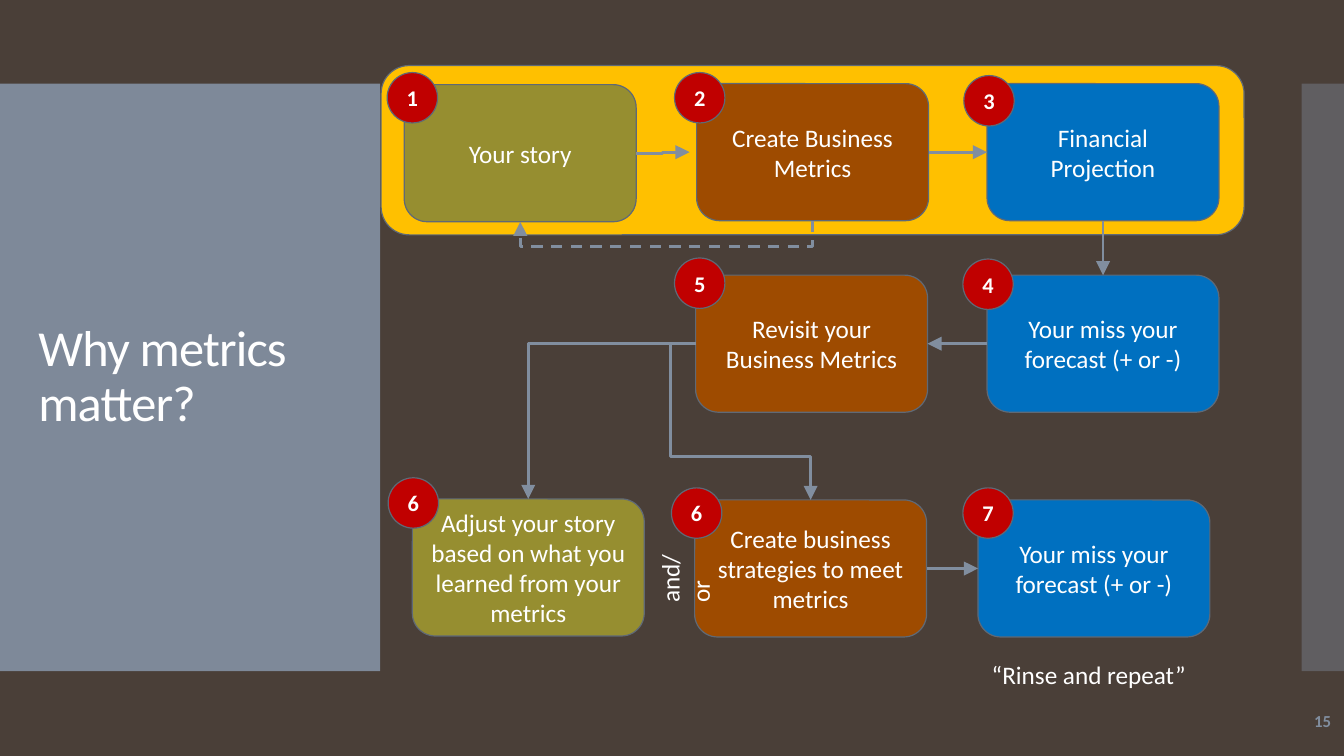
from dataclasses import dataclass

from lxml import etree
from pptx import Presentation
from pptx.dml.color import RGBColor
from pptx.enum.dml import MSO_LINE
from pptx.enum.shapes import MSO_CONNECTOR, MSO_SHAPE
from pptx.enum.text import MSO_ANCHOR, PP_ALIGN
from pptx.oxml.ns import qn
from pptx.util import Inches, Pt

RECT, ROUND, OVAL = MSO_SHAPE.RECTANGLE, MSO_SHAPE.ROUNDED_RECTANGLE, MSO_SHAPE.OVAL
STRAIGHT, ELBOW = MSO_CONNECTOR.STRAIGHT, MSO_CONNECTOR.ELBOW
LEFT, CENTER, RIGHT = PP_ALIGN.LEFT, PP_ALIGN.CENTER, PP_ALIGN.RIGHT
TOP_ANCHOR, MIDDLE = MSO_ANCHOR.TOP, MSO_ANCHOR.MIDDLE
DASH = MSO_LINE.DASH
TOP_SIDE, LEFT_SIDE, BOTTOM_SIDE, RIGHT_SIDE = range(4)


@dataclass(frozen=True)
class Theme:
    font: str = "Calibri"
    background: str = "4A3F38"
    slate: str = "818E9F"
    outline: str = "5F6976"
    band: str = "FFC000"
    story: str = "968E30"
    metrics: str = "9E4B00"
    forecast: str = "0070C0"
    badge: str = "C00000"
    text: str = "FFFFFF"
    title_size: int = 36
    body_size: int = 18
    badge_size: int = 16
    number_size: int = 12


THEME = Theme()
STEP_SIZE = (2.3, 1.36)
BADGE_SIZE = (0.5, 0.5)
STEPS = {
    "story": ("1", "Your story", THEME.story, (0.23, 0.19), (0.06, 0.07)),
    "metrics": ("2", "Create Business Metrics", THEME.metrics, (3.13, 0.18), (2.91, 0.07)),
    "projection": ("3", "Financial Projection", THEME.forecast, (6.01, 0.18), (5.78, 0.1)),
    "miss": ("4", "Your miss your forecast (+ or -)", THEME.forecast, (6.01, 2.08), (5.77, 1.92)),
    "revisit": ("5", "Revisit your Business Metrics", THEME.metrics, (3.12, 2.08), (2.91, 1.91)),
    "adjust": ("6", "Adjust your story based on what you learned from your metrics",
               THEME.story, (0.31, 4.3), (0.07, 4.09)),
    "strategy": ("6", "Create business strategies to meet metrics",
                 THEME.metrics, (3.11, 4.31), (2.88, 4.19)),
    "repeat": ("7", "Your miss your forecast (+ or -)", THEME.forecast, (5.92, 4.31), (5.77, 4.19)),
}


def apply(target, **values):
    for name, value in values.items():
        setattr(target, name, value)


def write(shape, text, size, color=THEME.text, align=CENTER, anchor=MIDDLE, bold=False):
    frame = shape.text_frame
    apply(frame, word_wrap=True, vertical_anchor=anchor)
    para = frame.paragraphs[0]
    para.alignment = align
    span = para.add_run()
    span.text = text
    apply(span.font, name=THEME.font, size=Pt(size), bold=bold)
    span.font.color.rgb = RGBColor.from_string(color)
    return span


def add_block(page, kind, box, color, outlined=True, alpha=None):
    shape = page.shapes.add_shape(kind, *map(Inches, box))
    shape.shadow.inherit = False
    shape.fill.solid()
    shape.fill.fore_color.rgb = RGBColor.from_string(color)
    if outlined:
        shape.line.color.rgb = RGBColor.from_string(THEME.outline)
        shape.line.width = Pt(0.85)
    else:
        shape.line.fill.background()
    if alpha:
        tint = shape._element.spPr.find(qn("a:solidFill")).find(qn("a:srgbClr"))
        etree.SubElement(tint, qn("a:alpha"), val=str(alpha * 1000))
    return shape


def add_label(page, box, text, size, **layout):
    label = page.shapes.add_textbox(*map(Inches, box))
    write(label, text, size, **layout)
    return label


def add_arrow(page, kind, source, target, preset=None, adjust=(), downward=False, dash=None):
    arrow = page.shapes.add_connector(kind, 0, 0, 0, 0)
    arrow.begin_connect(*source)
    if isinstance(target[0], int):
        arrow.end_x, arrow.end_y = target
    else:
        arrow.end_connect(*target)
    if downward:
        middle_x = (arrow.begin_x + arrow.end_x) // 2
        middle_y = (arrow.begin_y + arrow.end_y) // 2
        across, down = arrow.width, arrow.height
        apply(arrow, left=middle_x - down // 2, top=middle_y - across // 2,
              width=down, height=across)
        transform = arrow._element.spPr.find(qn("a:xfrm"))
        transform.attrib.pop("flipH", None)
        transform.set("rot", "5400000")
    geometry = arrow._element.spPr.find(qn("a:prstGeom"))
    if preset:
        geometry.set("prst", preset)
    if adjust:
        guides = geometry.find(qn("a:avLst"))
        if guides is None:
            guides = etree.SubElement(geometry, qn("a:avLst"))
        for index, share in enumerate(adjust, 1):
            etree.SubElement(guides, qn("a:gd"), name=f"adj{index}",
                             fmla=f"val {round(share * 100000)}")
    arrow.line.color.rgb = RGBColor.from_string(THEME.slate)
    arrow.line.width = Pt(2)
    if dash:
        arrow.line.dash_style = dash
    outline = arrow._element.spPr.find(qn("a:ln"))
    etree.SubElement(outline, qn("a:tailEnd"), type="triangle", w="lg", len="lg")
    etree.SubElement(arrow._element.spPr, qn("a:effectLst"))


def draw_panels(page, box):
    left, top, width, height = box
    add_block(page, RECT, (left, top, 3.77, height), THEME.slate, False, 95)
    add_block(page, RECT, (left + width - 0.42, top, 0.42, height), THEME.slate, False, 40)


def place_title(page, box):
    title = page.shapes.title
    left, top, width, height = map(Inches, box)
    apply(title, left=left, top=top, width=width, height=height)
    span = write(title, "Why metrics matter?", THEME.title_size, align=LEFT)
    title.text_frame.paragraphs[0].line_spacing = 0.9
    span.font._element.set("spc", "-60")
    title._element.getparent().append(title._element)


def draw_flow(page, box):
    left, top, width, height = box
    add_block(page, ROUND, (left, top, width, 1.68), THEME.band)
    steps = {}
    for name, (number, text, color, (x, y), spot) in STEPS.items():
        steps[name] = add_block(page, ROUND, (left + x, top + y, *STEP_SIZE), color)
        write(steps[name], text, THEME.body_size)

    def side(name, site):
        return steps[name], site

    before_metrics = Inches(left + 3.06), Inches(top + 0.86)
    add_arrow(page, ELBOW, side("story", RIGHT_SIDE), before_metrics)
    add_arrow(page, ELBOW, side("metrics", RIGHT_SIDE), side("projection", LEFT_SIDE))
    add_arrow(page, ELBOW, side("projection", BOTTOM_SIDE), side("miss", TOP_SIDE), downward=True)
    add_arrow(page, ELBOW, side("miss", LEFT_SIDE), side("revisit", RIGHT_SIDE))
    add_arrow(page, ELBOW, side("revisit", LEFT_SIDE), side("adjust", TOP_SIDE),
              "bentConnector2")
    add_arrow(page, ELBOW, side("revisit", LEFT_SIDE), side("strategy", TOP_SIDE),
              "bentConnector4", (-0.22, 0.72))
    add_arrow(page, ELBOW, side("metrics", BOTTOM_SIDE), side("story", BOTTOM_SIDE),
              adjust=(26,), downward=True, dash=DASH)
    add_arrow(page, STRAIGHT, side("strategy", RIGHT_SIDE), side("repeat", LEFT_SIDE))

    choice = add_label(page, (left + 2.42, top + 4.79, 0.88, 0.4), "and/or",
                       THEME.body_size, align=LEFT, anchor=TOP_ANCHOR)
    choice.rotation = 270
    for number, text, color, spot, (x, y) in STEPS.values():
        badge = add_block(page, OVAL, (left + x, top + y, *BADGE_SIZE), THEME.badge)
        write(badge, number, THEME.badge_size, bold=True)
    add_label(page, (left + 4.58, top + height - 0.4, 3.5, 0.4), "“Rinse and repeat”",
              THEME.body_size, align=RIGHT, anchor=TOP_ANCHOR)


def draw_number(page, box):
    add_label(page, box, "15", THEME.number_size, color=THEME.slate, align=RIGHT, bold=True)


def main():
    deck = Presentation()
    apply(deck, slide_width=Inches(13.33), slide_height=Inches(7.5))
    page = deck.slides.add_slide(deck.slide_layouts[5])
    page.background.fill.solid()
    page.background.fill.fore_color.rgb = RGBColor.from_string(THEME.background)
    draw_panels(page, (0, 0.83, 13.33, 5.83))
    place_title(page, (0.28, 1.23, 3.22, 5.03))
    draw_flow(page, (3.78, 0.65, 8.56, 6.24))
    draw_number(page, (11.63, 6.95, 1.67, 0.4))
    deck.save("out.pptx")


if __name__ == "__main__":
    main()
